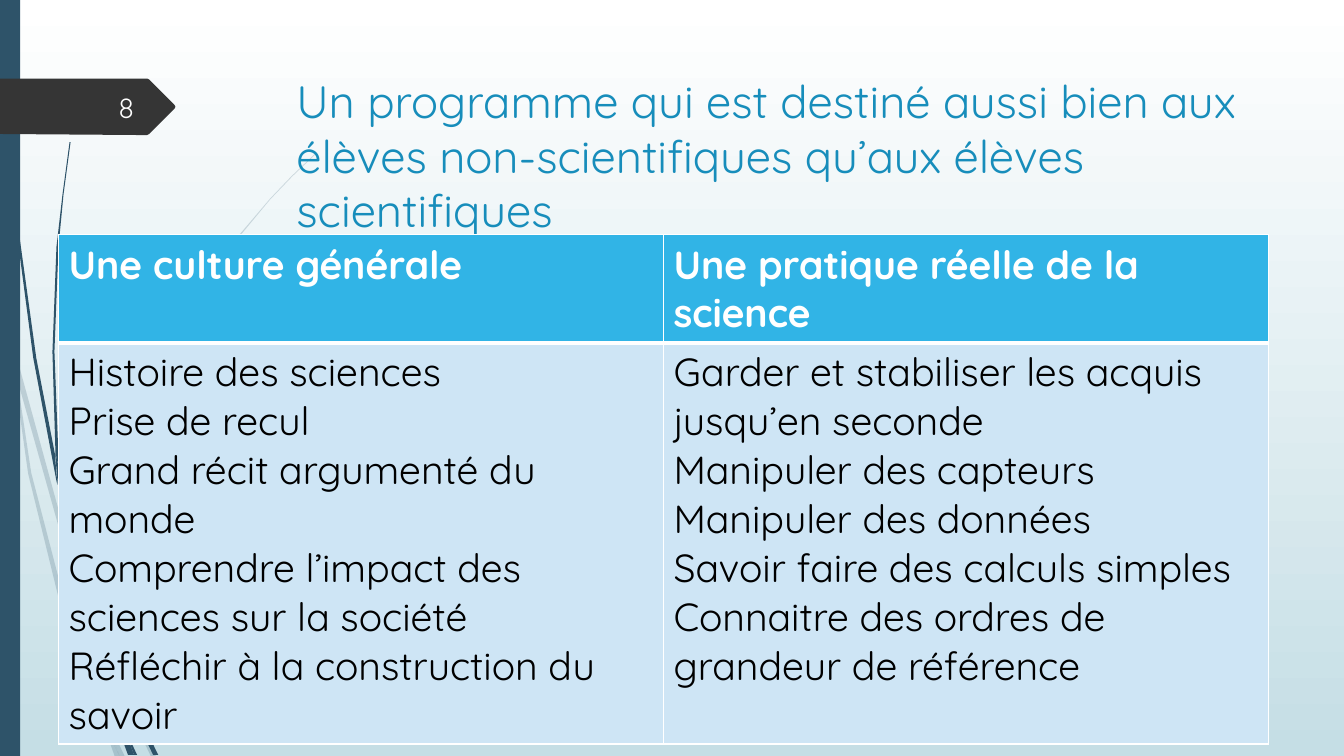
from dataclasses import dataclass

from lxml import etree
from pptx import Presentation
from pptx.dml.color import RGBColor
from pptx.enum.shapes import MSO_SHAPE
from pptx.enum.text import MSO_ANCHOR, MSO_AUTO_SIZE, PP_ALIGN
from pptx.oxml.ns import qn
from pptx.util import Inches, Pt

RECTANGLE = MSO_SHAPE.RECTANGLE
TOP, MIDDLE = MSO_ANCHOR.TOP, MSO_ANCHOR.MIDDLE
LEFT, RIGHT = PP_ALIGN.LEFT, PP_ALIGN.RIGHT
NO_AUTOFIT = MSO_AUTO_SIZE.NONE


@dataclass
class Theme:
    font: str = "Quicksand"
    white: str = "FFFFFF"
    mist: str = "C5DEE5"
    navy: str = "2E5369"
    charcoal: str = "353535"
    title: str = "178DBB"
    header: str = "31B4E6"
    body: str = "CEE5F5"
    black: str = "000000"
    title_size: float = 32.4
    table_size: float = 28
    number_size: float = 20


theme = Theme()
HUNDREDTH = Inches(0.01)

PALE_STEMS = [
    [(11, 350), (9, 322), (0, 282), (0, 299), (10, 344)],
    [(58, 522), (84, 599), (85, 586), (62, 520), (14, 345), (17, 376)],
    [(92, 607), (88, 596), (88, 610), (123, 694), (150, 751), (155, 751), (127, 692)],
    [(119, 751), (124, 751), (105, 711)],
    [(93, 683), (70, 619), (31, 469), (17, 376), (11, 350), (28, 470), (65, 621),
     (92, 693), (101, 714), (99, 707)],
    [(84, 599), (87, 646), (93, 683), (96, 692), (105, 711), (103, 706), (91, 646),
     (88, 610), (88, 608)],
    [(88, 584), (110, 462), (160, 349), (229, 245), (268, 198), (290, 175), (312, 154),
     (312, 153), (289, 175), (268, 197), (228, 244), (158, 348), (107, 461), (85, 584),
     (85, 586), (88, 596)],
    [(101, 714), (114, 751), (119, 751)],
    [(88, 608), (88, 610), (88, 596), (85, 586), (84, 599)],
    [(96, 692), (93, 683), (99, 707), (101, 714), (119, 751), (105, 711)],
]
DARK_STEMS = [
    [(7, 110), (17, 233), (33, 355), (56, 477), (57, 481), (55, 457), (55, 453),
     (36, 355), (19, 232), (8, 109), (5, 48), (4, 0), (3, 0), (4, 48)],
    [(88, 592), (106, 645), (106, 633), (106, 631), (93, 590), (60, 472), (64, 505)],
    [(113, 649), (110, 641), (111, 656), (132, 708), (152, 749), (157, 749), (136, 706)],
    [(110, 691), (98, 657), (72, 556), (64, 505), (57, 477), (68, 557), (93, 659),
     (111, 708), (117, 722), (116, 717)],
    [(60, 472), (58, 453), (54, 349), (58, 245), (63, 193), (70, 141), (69, 141),
     (62, 193), (56, 245), (52, 349), (55, 449)],
    [(133, 749), (136, 749), (122, 719)],
    [(57, 477), (64, 505), (60, 472), (55, 449), (55, 453)],
    [(111, 633), (125, 552), (158, 476), (205, 406), (231, 374), (245, 359), (261, 344),
     (260, 344), (245, 358), (231, 373), (204, 405), (156, 474), (122, 551), (106, 631),
     (110, 641)],
    [(117, 722), (127, 749), (131, 749)],
    [(106, 645), (110, 691), (116, 706), (122, 719), (121, 716), (111, 656), (109, 651)],
    [(106, 645), (109, 651), (111, 656), (110, 641), (106, 631), (106, 633)],
    [(116, 706), (110, 691), (116, 717), (117, 722), (130, 749), (133, 749), (122, 719)],
]
NUMBER_TAG = [(173, 108), (148, 133), (146, 134), (136, 134), (0, 133), (0, 78),
              (146, 78), (148, 79), (173, 104), (174, 106)]

TABLE_ROWS = [
    ["Une culture générale", "Une pratique réelle de la science"],
    [
        "Histoire des sciences\nPrise de recul\nGrand récit argumenté du monde\n"
        "Comprendre l’impact des sciences sur la société\n"
        "Réfléchir à la construction du savoir",
        "Garder et stabiliser les acquis jusqu’en seconde\nManipuler des capteurs\n"
        "Manipuler des données\nSavoir faire des calculs simples\n"
        "Connaitre des ordres de grandeur de référence",
    ],
]


def write_text(frame, text, size, color, bold=False, align=LEFT, spacing=1.0):
    frame.text = text
    frame.word_wrap = True
    for paragraph in frame.paragraphs:
        paragraph.alignment = align
        paragraph.line_spacing = spacing
        for run in paragraph.runs:
            run.font.name = theme.font
            run.font.size = Pt(size)
            run.font.bold = bold
            run.font.color.rgb = RGBColor.from_string(color)


def draw_outline(points, color, opacity=100):
    builder = slide.shapes.build_freeform(*points[0], scale=HUNDREDTH)
    builder.add_line_segments(points[1:], close=True)
    shape = builder.convert_to_shape()
    shape.shadow.inherit = False
    shape.line.fill.background()
    shape.fill.solid()
    shape.fill.fore_color.rgb = RGBColor.from_string(color)
    if opacity < 100:
        color_element = shape._element.spPr.find(".//" + qn("a:srgbClr"))
        etree.SubElement(color_element, qn("a:alpha"), val=str(opacity * 1000))


presentation = Presentation()
presentation.slide_width = Inches(13.33)
presentation.slide_height = Inches(7.5)
slide = presentation.slides.add_slide(presentation.slide_layouts[5])

background = slide.background.fill
background.gradient()
background.gradient_angle = 270
for stop, position, color in zip(background.gradient_stops, (0, 1), (theme.white, theme.mist)):
    stop.position = position
    stop.color.rgb = RGBColor.from_string(color)

for stem in PALE_STEMS:
    draw_outline(stem, theme.navy, opacity=20)
for stem in DARK_STEMS:
    draw_outline(stem, theme.navy)

side_band = slide.shapes.add_shape(RECTANGLE, 0, 0, Inches(0.2), presentation.slide_height)
side_band.shadow.inherit = False
side_band.line.fill.background()
side_band.fill.solid()
side_band.fill.fore_color.rgb = RGBColor.from_string(theme.navy)
draw_outline(NUMBER_TAG, theme.charcoal)

title = slide.shapes.title
title.left, title.top = Inches(2.84), Inches(0.68)
title.width, title.height = Inches(9.75), Inches(1.4)
write_text(
    title.text_frame,
    "Un programme qui est destiné aussi bien aux élèves non-scientifiques "
    "qu’aux élèves scientifiques",
    size=theme.title_size, color=theme.title,
)
title.text_frame.vertical_anchor = TOP
title.text_frame.auto_size = NO_AUTOFIT
slide.shapes._spTree.append(title._element)

table_frame = slide.shapes.add_table(2, 2, Inches(0.58), Inches(2.33), Inches(12), Inches(5.04))
table = table_frame.table
row_styles = [
    (1.06, theme.header, theme.white, True, 3),
    (3.98, theme.body, theme.black, False, 1),
]
for row_index, (height, fill, color, bold, bottom_width) in enumerate(row_styles):
    table.rows[row_index].height = Inches(height)
    top_width = row_styles[row_index - 1][4] if row_index else 1
    for column_index, text in enumerate(TABLE_ROWS[row_index]):
        cell = table.cell(row_index, column_index)
        write_text(cell.text_frame, text, size=theme.table_size, color=color, bold=bold)
        properties = cell._tc.get_or_add_tcPr()
        for side, width in zip("LRTB", (1, 1, top_width, bottom_width)):
            border = etree.SubElement(properties, qn(f"a:ln{side}"), w=str(Pt(width)))
            border_fill = etree.SubElement(border, qn("a:solidFill"))
            etree.SubElement(border_fill, qn("a:srgbClr"), val=theme.white)
        cell.fill.solid()
        cell.fill.fore_color.rgb = RGBColor.from_string(fill)

number = slide.shapes.add_textbox(Inches(0.58), Inches(0.86), Inches(0.85), Inches(0.4))
write_text(number.text_frame, "8", size=theme.number_size, color=theme.white, align=RIGHT)
number.text_frame.vertical_anchor = MIDDLE

presentation.save("out.pptx")
